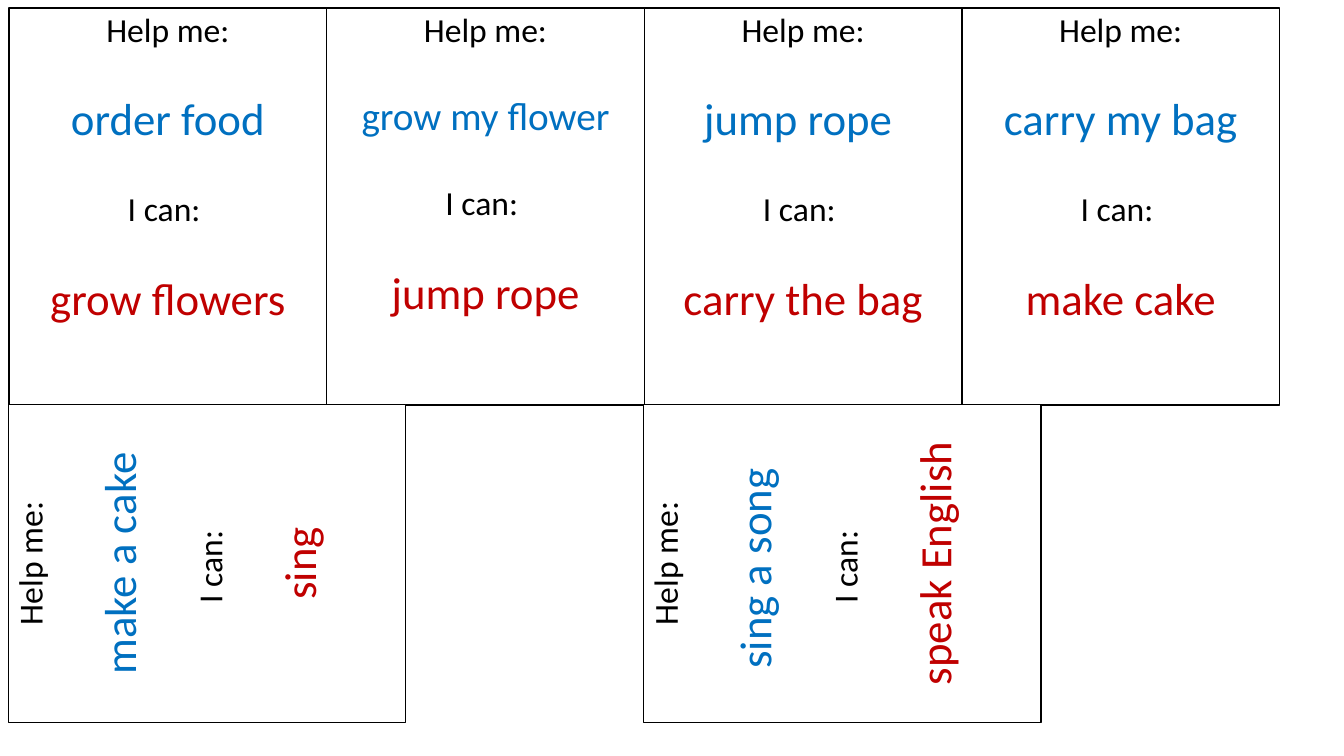
from pptx import Presentation
from pptx.dml.color import RGBColor
from pptx.enum.shapes import MSO_SHAPE as Shape
from pptx.enum.text import MSO_ANCHOR as Anchor, PP_ALIGN as Align
from pptx.util import Inches, Pt

BLACK = RGBColor(0, 0, 0)
WHITE = RGBColor(255, 255, 255)
BLUE = RGBColor(0, 112, 192)
RED = RGBColor(192, 0, 0)

WIDTH, HEIGHT = 3.15, 3.94
UPRIGHT = [
    ("order food", 32, "grow flowers"),
    ("grow my flower", 28, "jump rope"),
    ("jump rope ", 32, "carry the bag"),
    ("carry my bag", 32, "make cake"),
]
TURNED = [
    ("make a cake", 32, "sing"),
    ("sing a song ", 32, "speak English"),
]


def set_all(item, values):
    for name, value in values.items():
        setattr(item, name, value)


def add_line(para, text, size, color, gap):
    set_all(para, {"alignment": Align.CENTER, "line_spacing": 0.9, "space_before": Pt(gap)})
    run = para.add_run()
    run.text = text
    set_all(run.font, {"name": "Calibri", "size": Pt(size)})
    run.font.color.rgb = color


def add_card(slide, left, top, card, angle=0):
    need, size, skill = card
    box = slide.shapes.add_shape(
        Shape.RECTANGLE, Inches(left), Inches(top), Inches(WIDTH), Inches(HEIGHT))
    box.rotation = angle
    box.shadow.inherit = False
    box.fill.solid()
    box.fill.fore_color.rgb = WHITE
    box.line.color.rgb = BLACK
    box.line.width = Pt(1)
    frame = box.text_frame
    set_all(frame, {"word_wrap": True, "vertical_anchor": Anchor.TOP})
    lines = [
        ("Help me:", 24, BLACK),
        (need, size, BLUE),
        ("I can: ", 24, BLACK),
        (skill, 32, RED),
    ]
    for i, line in enumerate(lines):
        para = frame.add_paragraph() if i else frame.paragraphs[0]
        add_line(para, *line, gap=34 if i else 0)


def main():
    deck = Presentation()
    set_all(deck, {"slide_width": Inches(13.33), "slide_height": Inches(7.5)})
    slide = deck.slides.add_slide(deck.slide_layouts[6])
    for i, card in enumerate(UPRIGHT):
        add_card(slide, 0.09 + i * WIDTH, 0.08, card)
    for i, card in enumerate(TURNED):
        add_card(slide, 0.48 + i * 2 * WIDTH, 3.62, card, 270)
    deck.save("out.pptx")


if __name__ == "__main__":
    main()
